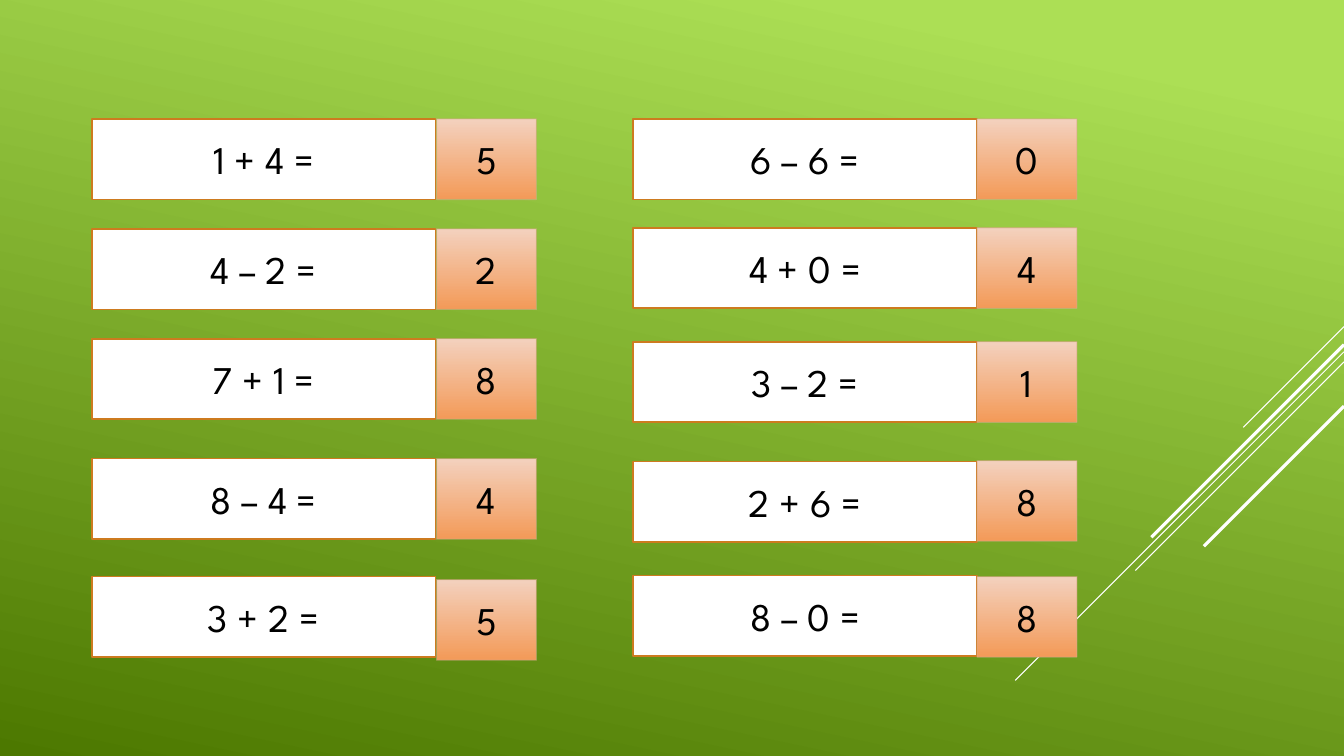
from lxml.etree import SubElement
from pptx import Presentation
from pptx.dml.color import RGBColor
from pptx.enum.shapes import MSO_CONNECTOR, MSO_SHAPE
from pptx.enum.text import MSO_ANCHOR, PP_ALIGN
from pptx.oxml.ns import qn
from pptx.util import Inches, Pt

WIDE, HIGH = 13.33, 7.5
SUM_W, BOX_W, ROW_H = 3.41, 0.99, 0.8

# Column left, answer left, then rows: sum, answer, sum top, answer top
COLS = [
    (0.91, 4.33, [
        ("1 + 4 =", "5", 1.18, 1.18),
        ("4 – 2 =", "2", 2.27, 2.27),
        ("7 + 1 =", "8", 3.36, 3.36),
        ("8 – 4 =", "4", 4.55, 4.55),
        ("3 + 2 =", "5", 5.72, 5.75),
    ]),
    (6.28, 9.69, [
        ("6 – 6 =", "0", 1.18, 1.18),
        ("4 + 0 =", "4", 2.26, 2.26),
        ("3 – 2 =", "1", 3.39, 3.39),
        ("2 + 6 =", "8", 4.58, 4.57),
        ("8 – 0 =", "8", 5.71, 5.72),
    ]),
]
# Top at the right edge, run to the left and down, width in points
RAYS = [(3.24, 1, 0.75), (3.49, 3.26, 0.75), (3.59, 2.07, 0.75),
        (3.42, 1.91, 2.25), (4.03, 1.39, 2.25)]


def paint(color, code):
    color.rgb = RGBColor.from_string(code)


def blend(fill, stops, angle):
    """Fill with a two-stop gradient; the angle runs clockwise."""
    fill.gradient()
    fill.gradient_angle = 360 - angle
    for stop, (place, code) in zip(fill.gradient_stops, stops):
        stop.position = place
        paint(stop.color, code)


def add_ray(slide, top, run, width):
    ray = slide.shapes.add_connector(
        MSO_CONNECTOR.STRAIGHT, Inches(WIDE), Inches(top),
        Inches(WIDE - run), Inches(top + run))
    paint(ray.line.color, "FFFFFF")
    ray.line.width = Pt(width)
    SubElement(ray.element.spPr, qn("a:effectLst"))


def add_box(slide, text, left, top, width, edge, weight):
    box = slide.shapes.add_shape(
        MSO_SHAPE.RECTANGLE, Inches(left), Inches(top),
        Inches(width), Inches(ROW_H))
    box.shadow.inherit = False
    paint(box.line.color, edge)
    box.line.width = Pt(weight)
    frame = box.text_frame
    frame.text = text
    frame.vertical_anchor = MSO_ANCHOR.MIDDLE
    para = frame.paragraphs[0]
    para.alignment = PP_ALIGN.CENTER
    font = para.runs[0].font
    font.name, font.size = "League Spartan", Pt(28)
    paint(font.color, "000000")
    return box


def add_sum(slide, text, left, top):
    box = add_box(slide, text, left, top, SUM_W, "CD7B1F", 1.25)
    box.fill.solid()
    paint(box.fill.fore_color, "FFFFFF")


def add_answer(slide, text, left, top):
    box = add_box(slide, text, left, top, BOX_W, "DAA98B", 0.75)
    blend(box.fill, [(0, "F3D1BE"), (1, "F39A58")], 90)
    tint = box.element.spPr.find(qn("a:ln")).find(".//" + qn("a:srgbClr"))
    SubElement(tint, qn("a:alpha"), val="60000")


def main():
    deck = Presentation()
    deck.slide_width, deck.slide_height = Inches(WIDE), Inches(HIGH)
    slide = deck.slides.add_slide(deck.slide_layouts[6])
    blend(slide.background.fill, [(0.1, "ACDF55"), (1, "4C7800")], 102)
    for ray in RAYS:
        add_ray(slide, *ray)
    for left, side, rows in COLS:
        for task, answer, top, drop in rows:
            add_sum(slide, task, left, top)
            add_answer(slide, answer, side, drop)
    deck.save("out.pptx")


if __name__ == "__main__":
    main()
